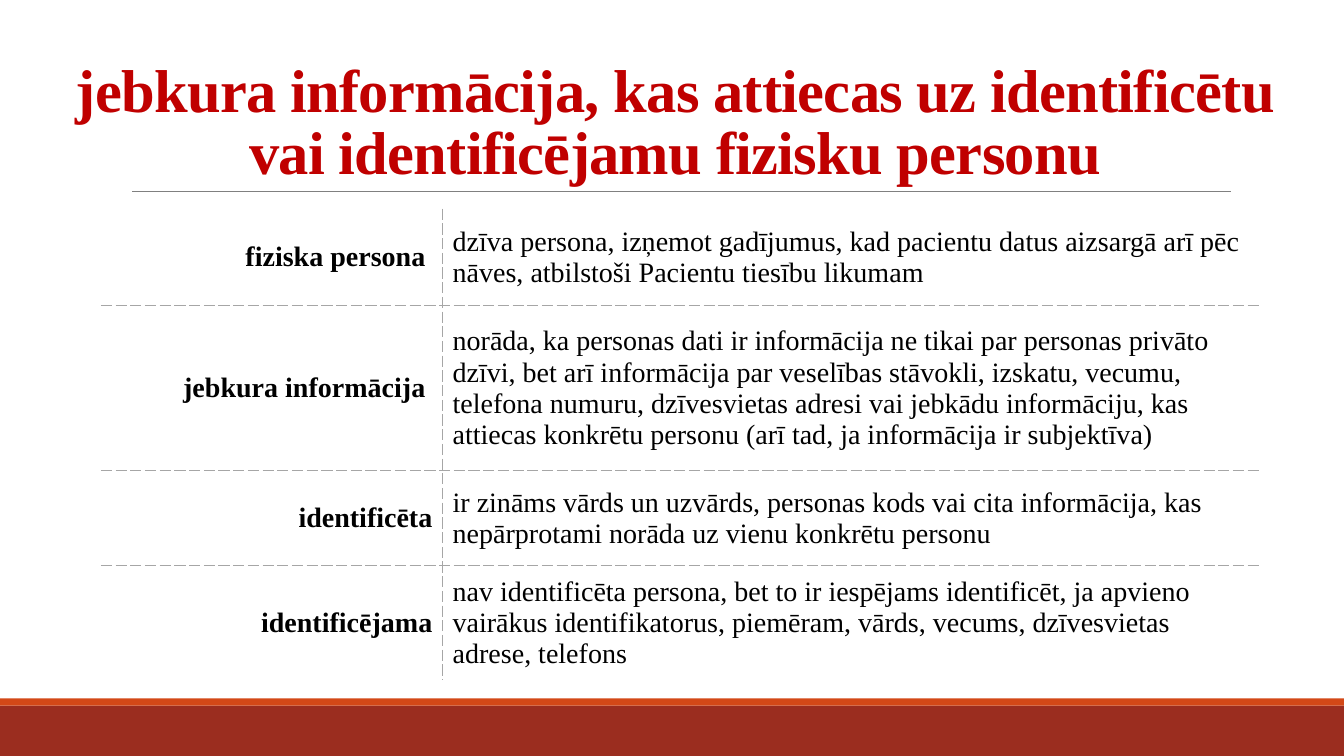
from lxml import etree
from pptx import Presentation
from pptx.dml.color import RGBColor
from pptx.enum.shapes import MSO_CONNECTOR, MSO_SHAPE
from pptx.enum.text import MSO_ANCHOR, MSO_AUTO_SIZE, PP_ALIGN
from pptx.oxml import parse_xml
from pptx.oxml.ns import nsdecls, qn
from pptx.util import Inches, Pt

RECTANGLE = MSO_SHAPE.RECTANGLE
STRAIGHT = MSO_CONNECTOR.STRAIGHT
MIDDLE, BOTTOM = MSO_ANCHOR.MIDDLE, MSO_ANCHOR.BOTTOM
LEFT, CENTER, RIGHT = PP_ALIGN.LEFT, PP_ALIGN.CENTER, PP_ALIGN.RIGHT
FONT = "Times New Roman"


def color(value):
    return RGBColor.from_string(value)


def style_text(paragraph, size, value, bold, alignment):
    paragraph.alignment = alignment
    paragraph.font.name = FONT
    paragraph.font.size = Pt(size)
    paragraph.font.bold = bold
    paragraph.font.color.rgb = color(value)


presentation = Presentation()
presentation.slide_width = Inches(13.33)
presentation.slide_height = Inches(7.5)
slide = presentation.slides.add_slide(presentation.slide_layouts[5])

for top, height, value in [(7, 0.5, "9B2D1F"), (6.93, 0.07, "D34817")]:
    band = slide.shapes.add_shape(
        RECTANGLE, 0, Inches(top), presentation.slide_width, Inches(height))
    band.shadow.inherit = False
    band.fill.solid()
    band.fill.fore_color.rgb = color(value)
    band.line.fill.background()

rule = slide.shapes.add_connector(
    STRAIGHT, Inches(1.31), Inches(1.9), Inches(12.21), Inches(1.9))
rule.line.color.rgb = color("808080")
rule.line.width = Pt(0.5)
etree.SubElement(rule._element.spPr, qn("a:effectLst"))

title = slide.shapes.title
title.left, title.top = Inches(0.44), Inches(0.31)
title.width, title.height = Inches(12.51), Inches(1.59)
title_frame = title.text_frame
title_frame.text = "jebkura informācija, kas attiecas uz identificētu vai identificējamu fizisku personu"
title_frame.auto_size = MSO_AUTO_SIZE.NONE
title_frame.word_wrap = True
title_frame.vertical_anchor = BOTTOM
heading = title_frame.paragraphs[0]
heading.line_spacing = 0.85
style_text(heading, 43.2, "C00000", True, CENTER)
heading.runs[0].font._element.set("spc", "-50")

definitions = [
    ("fiziska persona ",
     "dzīva persona, izņemot gadījumus, kad pacientu datus aizsargā arī pēc nāves, "
     "atbilstoši Pacientu tiesību likumam"),
    ("jebkura informācija ",
     "norāda, ka personas dati ir informācija ne tikai par personas privāto dzīvi, "
     "bet arī informācija par veselības stāvokli, izskatu, vecumu, telefona numuru, "
     "dzīvesvietas adresi vai jebkādu informāciju, kas attiecas konkrētu personu "
     "(arī tad, ja informācija ir subjektīva)"),
    ("identificēta",
     "ir zināms vārds un uzvārds, personas kods vai cita informācija, "
     "kas nepārprotami norāda uz vienu konkrētu personu"),
    ("identificējama",
     "nav identificēta persona, bet to ir iespējams identificēt, ja apvieno vairākus "
     "identifikatorus, piemēram, vārds, vecums, dzīvesvietas adrese, telefons"),
]
column_widths = [3.39, 8.12]
row_heights = [0.96, 1.64, 0.94, 1.14]
last_row = len(definitions) - 1

table = slide.shapes.add_table(
    len(definitions), 2, Inches(1), Inches(2.07),
    Inches(sum(column_widths)), Inches(sum(row_heights))).table
table.first_row = False
table.horz_banding = False
for column, width in zip(table.columns, column_widths):
    column.width = Inches(width)

for row_index, texts in enumerate(definitions):
    table.rows[row_index].height = Inches(row_heights[row_index])
    for column_index, text in enumerate(texts):
        is_term = column_index == 0
        cell = table.cell(row_index, column_index)
        cell.text = text
        cell.vertical_anchor = MIDDLE
        style_text(cell.text_frame.paragraphs[0], 20, "000000", is_term,
                   RIGHT if is_term else LEFT)
        inner_sides = {"lnL": not is_term, "lnR": is_term,
                       "lnT": row_index > 0, "lnB": row_index < last_row}
        for side, is_inner in inner_sides.items():
            stroke = ('<a:solidFill><a:srgbClr val="A6A6A6"/></a:solidFill>'
                      '<a:prstDash val="sysDash"/>') if is_inner else "<a:noFill/>"
            cell._tc.get_or_add_tcPr().append(parse_xml(
                f'<a:{side} {nsdecls("a")} w="{Pt(1)}">{stroke}</a:{side}>'))
        cell.fill.background()

presentation.save("out.pptx")
